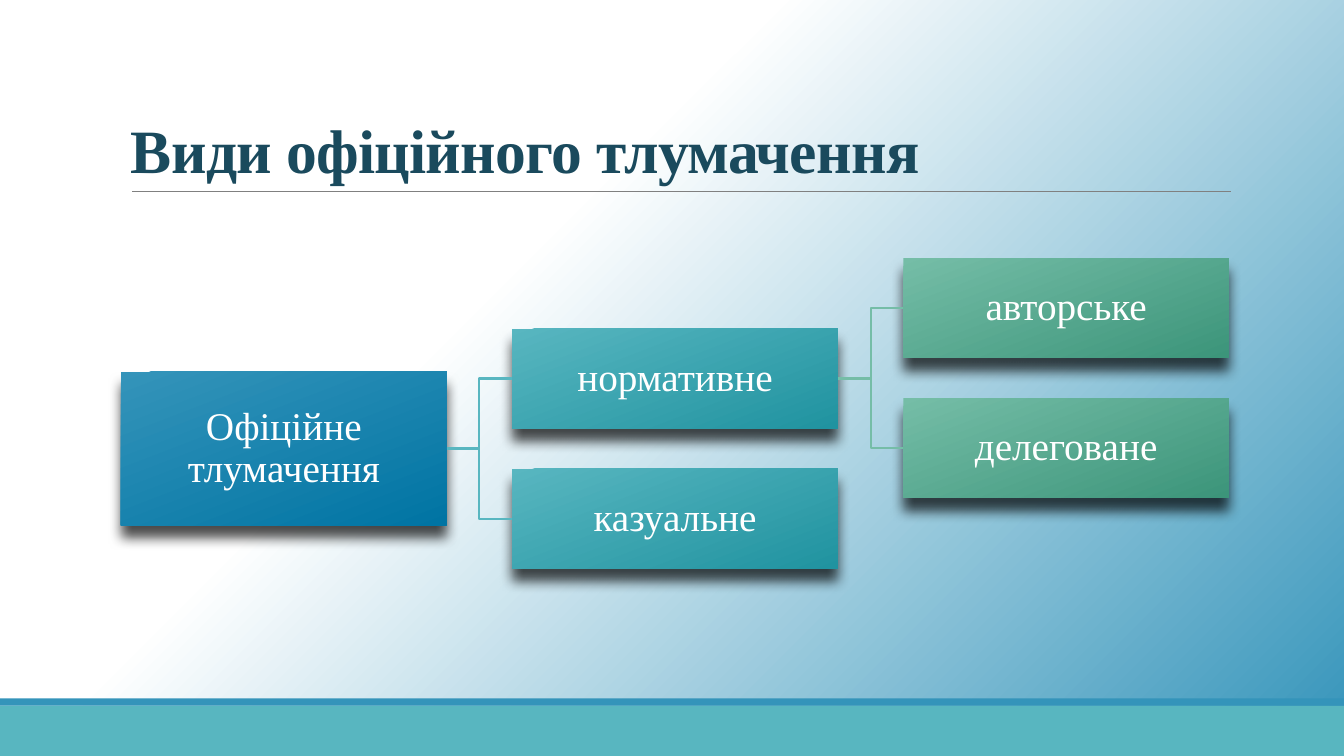
"""Build the slide on the kinds of official interpretation."""
from lxml import etree
from pptx import Presentation
from pptx.dml.color import RGBColor
from pptx.enum.shapes import MSO_CONNECTOR, MSO_SHAPE
from pptx.enum.text import MSO_ANCHOR, PP_ALIGN
from pptx.oxml.ns import qn
from pptx.util import Inches, Pt

RECTANGLE = MSO_SHAPE.RECTANGLE
STRAIGHT, ELBOW = MSO_CONNECTOR.STRAIGHT, MSO_CONNECTOR.ELBOW
LEFT, CENTER = PP_ALIGN.LEFT, PP_ALIGN.CENTER
BOTTOM, MIDDLE = MSO_ANCHOR.BOTTOM, MSO_ANCHOR.MIDDLE
RIGHT_SITE, LEFT_SITE = 3, 1


def color(value):
    return RGBColor.from_string(value)


def write(shape, text, size=28, fill="FFFFFF", bold=False, align=CENTER,
          anchor=MIDDLE, spacing=0.9, side_inset=0.02, inset=0.02):
    frame = shape.text_frame
    frame.word_wrap = True
    frame.vertical_anchor = anchor
    frame.margin_left = frame.margin_right = Inches(side_inset)
    frame.margin_top = frame.margin_bottom = Inches(inset)
    paragraph = frame.paragraphs[0]
    paragraph.alignment = align
    paragraph.line_spacing = spacing
    run = paragraph.add_run()
    run.text = text
    run.font.name = "Times New Roman"
    run.font.size = Pt(size)
    run.font.bold = bold
    run.font.color.rgb = color(fill)
    return run


presentation = Presentation()
presentation.slide_width = Inches(13.33)
presentation.slide_height = Inches(7.5)
slide = presentation.slides.add_slide(presentation.slide_layouts[6])
shapes = slide.shapes

background = slide.background.fill
background.gradient()
background.gradient_angle = 315
for stop, position, value in zip(background.gradient_stops, (0.37, 1), ("FFFFFF", "3494BA")):
    stop.position = position
    stop.color.rgb = color(value)

for top, height, value in ((7, 0.5, "58B6C0"), (6.93, 0.07, "3494BA")):
    band = shapes.add_shape(RECTANGLE, 0, Inches(top), presentation.slide_width, Inches(height))
    band.shadow.inherit = False
    band.fill.solid()
    band.fill.fore_color.rgb = color(value)
    band.line.fill.background()

title = shapes.add_textbox(Inches(1.2), Inches(0.31), Inches(11), Inches(1.59))
title_run = write(title, "Види офіційного тлумачення", size=44, fill="1A4A5D", bold=True,
                  align=LEFT, anchor=BOTTOM, spacing=0.85, side_inset=0.1, inset=0.05)
title_run.font._element.set("spc", "-50")

rule = shapes.add_connector(STRAIGHT, Inches(1.31), Inches(1.9), Inches(12.21), Inches(1.9))
rule.line.color.rgb = color("808080")
rule.line.width = Pt(0.5)
etree.SubElement(rule._element.spPr, qn("a:effectLst"))

LEVEL_LEFT = (1.2, 5.08, 8.96)
LEVEL_COLORS = (("3494BA", "0074A3"), ("58B6C0", "2093A0"), ("75BDA7", "3C957A"))
BOXES = (
    ("Офіційне тлумачення", 0, 3.69, 1.52, None),
    ("нормативне", 1, 3.26, 0.99, "Офіційне тлумачення"),
    ("казуальне", 1, 4.65, 0.99, "Офіційне тлумачення"),
    ("авторське", 2, 2.56, 0.99, "нормативне"),
    ("делеговане", 2, 3.95, 0.99, "нормативне"),
)
boxes = {}
for text, level, top, height, parent in BOXES:
    box = shapes.add_shape(RECTANGLE, Inches(LEVEL_LEFT[level]), Inches(top),
                           Inches(3.23), Inches(height))
    boxes[text] = box
    box.line.fill.background()
    box.fill.gradient()
    box.fill.gradient_angle = 291
    for stop, position, value in zip(box.fill.gradient_stops, (0, 1), LEVEL_COLORS[level]):
        stop.position = position
        stop.color.rgb = color(value)
    box.shadow.inherit = False
    effects = box._element.spPr.find(qn("a:effectLst"))
    shadow = etree.SubElement(effects, qn("a:outerShdw"), blurRad=str(Pt(9)),
                              dist=str(Pt(9)), dir="5400000", rotWithShape="0")
    shade = etree.SubElement(shadow, qn("a:srgbClr"), val="000000")
    etree.SubElement(shade, qn("a:alpha"), val="70000")
    write(box, text)

    if parent:
        branch = shapes.add_connector(ELBOW, 0, 0, 0, 0)
        branch.begin_connect(boxes[parent], RIGHT_SITE)
        branch.end_connect(box, LEFT_SITE)
        branch.line.color.rgb = color(LEVEL_COLORS[level][0])
        branch.line.width = Pt(1.5)
        etree.SubElement(branch._element.spPr, qn("a:effectLst"))

presentation.save("out.pptx")
